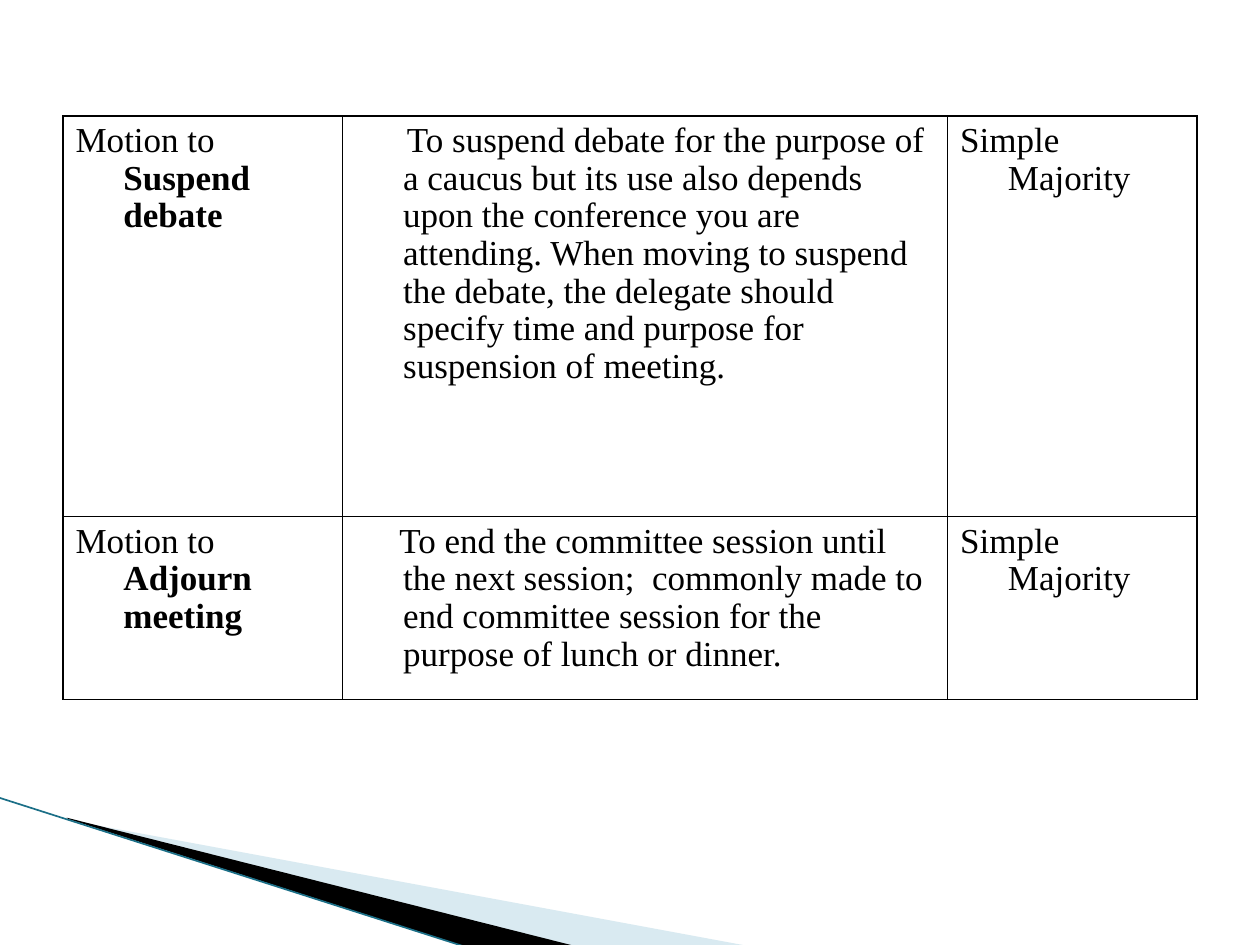
from pptx import Presentation
from pptx.dml.color import RGBColor
from pptx.enum.shapes import MSO_CONNECTOR as Conn
from pptx.oxml import parse_xml
from pptx.oxml.ns import nsdecls, qn
from pptx.util import Inches, Pt

SIZE = 10, 7.5
FONT, TEXT = "Times New Roman", 20
BLACK, PALE, TEAL = "000000", "A0CBDC", "1B6F87"
HANG = 0.38
COLS = [2.22, 4.8, 1.98]
HEIGHTS = [3.18, 1.45]
MOTIONS = [
    ("Suspend debate", 0.03,
     "To suspend debate for the purpose of a caucus but its use also depends "
     "upon the conference you are attending. When moving to suspend the debate, "
     "the delegate should specify time and purpose for suspension of meeting.",
     "Simple Majority"),
    ("Adjourn meeting", -0.03,
     "To end the committee session until the next session;  commonly made to "
     "end committee session for the purpose of lunch or dinner.",
     "Simple Majority"),
]
WEDGES = [
    (PALE, 40, [(0.55, 6.51), (5.95, 7.51), (4.56, 7.51), (0.55, 6.5)]),
    (BLACK, 100, [(0.53, 6.49), (4.57, 7.51), (3.72, 7.52), (0.54, 6.5)]),
]
EDGE = (-0.01, 6.33), (3.71, 7.52)


def paint(fill, color, alpha=100):
    fill.solid()
    fill.fore_color.rgb = RGBColor.from_string(color)
    if alpha < 100:
        node = fill._xPr.find(".//" + qn("a:srgbClr"))
        node.append(parse_xml(f'<a:alpha {nsdecls("a")} val="{alpha * 1000}"/>'))


def wedge(shapes, color, alpha, points):
    start, *rest = [(Inches(x), Inches(y)) for x, y in points]
    pen = shapes.build_freeform(*start)
    pen.add_line_segments(rest, close=True)
    shape = pen.convert_to_shape()
    shape.shadow.inherit = False
    shape.line.fill.background()
    paint(shape.fill, color, alpha)


def edge(shapes):
    (x1, y1), (x2, y2) = EDGE
    line = shapes.add_connector(
        Conn.STRAIGHT, Inches(x1), Inches(y1), Inches(x2), Inches(y2))
    paint(line.line.fill, TEAL)
    line.line.width = Pt(0.95)
    line._element.spPr.append(parse_xml(f'<a:effectLst {nsdecls("a")}/>'))


def border(cell):
    props = cell._tc.get_or_add_tcPr()
    for side in ("lnL", "lnR", "lnT", "lnB"):
        props.append(parse_xml(
            f'<a:{side} {nsdecls("a")} w="{Pt(1)}"><a:solidFill>'
            f'<a:srgbClr val="{BLACK}"/></a:solidFill></a:{side}>'))


def write(cell, runs, first):
    border(cell)
    cell.fill.background()
    para = cell.text_frame.paragraphs[0]
    props = para._p.get_or_add_pPr()
    props.set("marL", str(Inches(HANG)))
    props.set("indent", str(Inches(first)))
    para.line_spacing = 0.97
    para.font.name = FONT
    para.font.size = Pt(TEXT)
    para.font.color.rgb = RGBColor.from_string(BLACK)
    for text, bold in runs:
        run = para.add_run()
        run.text = text
        run.font.bold = bold


def grid(shapes):
    table = shapes.add_table(
        len(MOTIONS), len(COLS), Inches(0.5), Inches(0.92),
        Inches(sum(COLS)), Inches(sum(HEIGHTS))).table
    table.first_row = table.horz_banding = False
    for col, width in zip(table.columns, COLS):
        col.width = Inches(width)
    for row, height, (name, first, use, vote) in zip(table.rows, HEIGHTS, MOTIONS):
        row.height = Inches(height)
        motion, purpose, needed = row.cells
        write(motion, [("Motion to ", False), (name, True)], -HANG)
        write(purpose, [(use, False)], first)
        write(needed, [(vote, False)], -HANG)


def main():
    deck = Presentation()
    deck.slide_width, deck.slide_height = map(Inches, SIZE)
    shapes = deck.slides.add_slide(deck.slide_layouts[6]).shapes
    for item in WEDGES:
        wedge(shapes, *item)
    edge(shapes)
    grid(shapes)
    deck.save("out.pptx")


if __name__ == "__main__":
    main()
